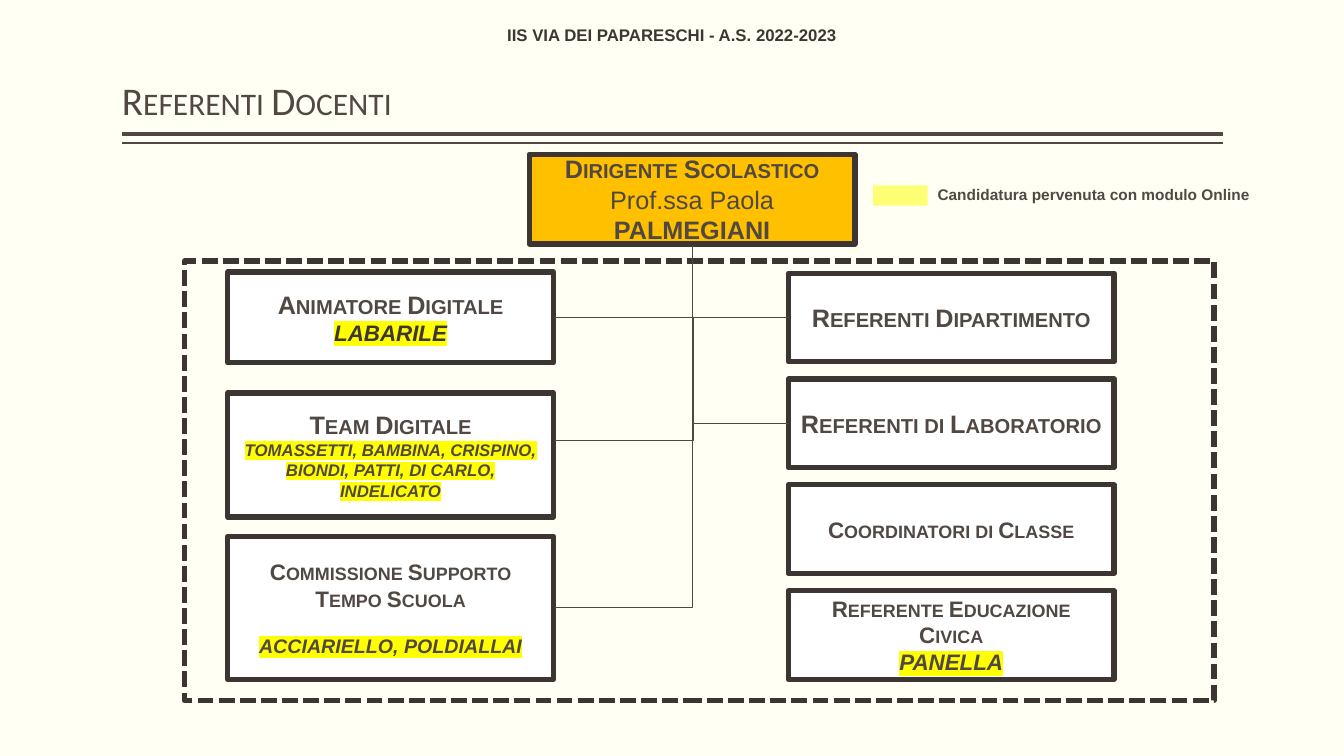
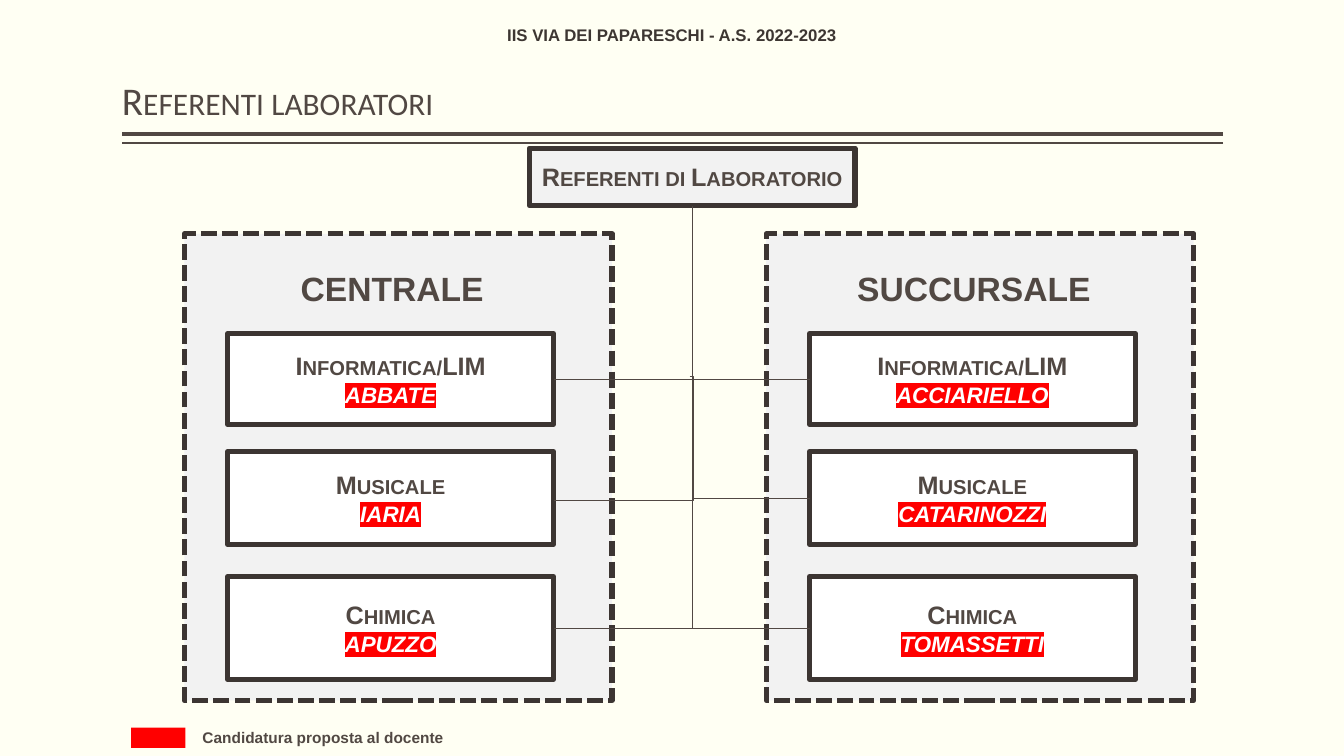
from lxml import etree
from pptx import Presentation
from pptx.dml.color import RGBColor
from pptx.enum.dml import MSO_LINE
from pptx.enum.shapes import MSO_CONNECTOR, MSO_SHAPE
from pptx.enum.text import MSO_ANCHOR, MSO_AUTO_SIZE, PP_ALIGN
from pptx.oxml.ns import qn
from pptx.util import Inches, Pt

COLORS = {
    "background": "FFFFF3", "text": "514843", "dark": "3D3632", "border": "3C3532",
    "white": "FFFFFF", "panel": "F2F2F2", "head": "FFC000", "yellow": "FFFF00",
    "pale_yellow": "FFFF76", "red": "FF0000",
}
SCHOOL = "IIS VIA DEI PAPARESCHI - A.S. 2022-2023"
SLIDE_WIDTH, SLIDE_HEIGHT = 13.33, 7.5
MARGIN, RULE_WIDTH = 1.21, 10.92
RULES = [(1.33, 3), (1.42, 1)]
BOX_WIDTH = 3.23
LEFT_X = 2.26
HEAD_X = 5.25
TRUNK_X = 6.87
SIDE_START_X = 6.84


def role(text, size=18):
    return [(text, dict(size=size, bold=True, small_caps=True))]


def teacher(text, size=16, color="text", highlight="yellow"):
    return [(text, dict(size=size, color=color, bold=True, italic=True, highlight=highlight))]


def proposed(subject, name):
    return [role(subject), teacher(name, color="white", highlight="red")]


TEACHERS_RIGHT_X = 7.82
TEACHERS_RIGHT_TOP, TEACHERS_RIGHT_STEP = 2.71, 1.05
TEACHERS_HEAD = [
    role("Dirigente Scolastico"),
    [("Prof.ssa Paola ", dict(size=18)), ("PALMEGIANI", dict(size=18, bold=True))],
]
TEACHERS_LEFT = [
    dict(top=2.7, height=0.9, gap=0,
         lines=[role("Animatore Digitale"), teacher("LABARILE", color="dark")]),
    dict(top=3.9, height=1.23, gap=0,
         lines=[role("Team Digitale"),
                teacher("TOMASSETTI, BAMBINA, CRISPINO, BIONDI, PATTI, DI CARLO, INDELICATO", 12)]),
    dict(top=5.32, height=1.42, gap=16,
         lines=[role("Commissione Supporto Tempo Scuola", 16),
                teacher("ACCIARIELLO, POLDIALLAI", 14)]),
]
TEACHERS_RIGHT = [
    [role("Referenti Dipartimento")],
    [role("Referenti di Laboratorio")],
    [role("Coordinatori di Classe", 16)],
    [role("Referente Educazione Civica", 16), teacher("PANELLA")],
]
TEACHERS_TREE = dict(left=[(2.43, 3.15), (2.43, 6.03)], side=(3.15, 4.37),
                     right=[(2.43, 3.15), (2.43, 4.2)])

SITE_OFFSET = 5.77
LAB_ROWS = [("Informatica/LIM", 3.31, 0.9), ("Musicale", 4.48, 0.92), ("Chimica", 5.72, 1.02)]
SITES = [
    ("CENTRALE", ["ABBATE", "IARIA", "APUZZO"]),
    ("SUCCURSALE", ["ACCIARIELLO", "CATARINOZZI", "TOMASSETTI"]),
]
LABS_TREE = dict(left=[(2.04, 3.76), (2.43, 6.23)], side=(3.73, 4.96),
                 right=[(2.04, 3.76), (2.04, 4.94), (2.04, 6.23)])


def rgb(name):
    return RGBColor.from_string(COLORS[name])


def add_run(paragraph, text, size, color="text", bold=False, italic=False,
            small_caps=False, highlight=None, font="Arial"):
    run = paragraph.add_run()
    run.text = text
    run.font.size = Pt(size)
    run.font.bold = bold
    run.font.italic = italic
    run.font.color.rgb = rgb(color)
    run.font.name = font
    properties = run._r.get_or_add_rPr()
    if small_caps:
        properties.set("cap", "small")
    if highlight:
        mark = etree.Element(qn("a:highlight"))
        etree.SubElement(mark, qn("a:srgbClr")).set("val", COLORS[highlight])
        properties.find(qn("a:latin")).addprevious(mark)


def fill_text(frame, lines, align=PP_ALIGN.CENTER, gap=0):
    frame.word_wrap = True
    for index, runs in enumerate(lines):
        paragraph = frame.add_paragraph() if index else frame.paragraphs[0]
        paragraph.alignment = align
        if index and gap:
            paragraph.space_before = Pt(gap)
        for text, style in runs:
            add_run(paragraph, text, **style)


def add_rectangle(slide, left, top, width, height, fill=None, border=True, dashed=False):
    shape = slide.shapes.add_shape(
        MSO_SHAPE.RECTANGLE, Inches(left), Inches(top), Inches(width), Inches(height))
    shape.shadow.inherit = False
    if fill:
        shape.fill.solid()
        shape.fill.fore_color.rgb = rgb(fill)
    else:
        shape.fill.background()
    if border:
        shape.line.color.rgb = rgb("border")
        shape.line.width = Pt(3.78)
        if dashed:
            shape.line.dash_style = MSO_LINE.SQUARE_DOT
    else:
        shape.line.fill.background()
    return shape


def add_box(slide, left, top, height, lines, fill="white", gap=0):
    shape = add_rectangle(slide, left, top, BOX_WIDTH, height, fill)
    shape.text_frame.vertical_anchor = MSO_ANCHOR.MIDDLE
    fill_text(shape.text_frame, lines, gap=gap)


def add_label(slide, left, top, width, height, text, size, align=PP_ALIGN.CENTER, color="text"):
    box = slide.shapes.add_textbox(Inches(left), Inches(top), Inches(width), Inches(height))
    fill_text(box.text_frame, [[(text, dict(size=size, bold=True, color=color))]], align)
    return box.text_frame


def add_line(slide, x1, y1, x2, y2, width=0.5, kind=MSO_CONNECTOR.STRAIGHT):
    line = slide.shapes.add_connector(kind, Inches(x1), Inches(y1), Inches(x2), Inches(y2))
    line.line.color.rgb = rgb("text")
    line.line.width = Pt(width)
    etree.SubElement(line._element.spPr, qn("a:effectLst"))
    return line


def add_branch(slide, top, x, y):
    center_x, center_y = (TRUNK_X + x) / 2, (top + y) / 2
    half_width, half_height = (y - top) / 2, abs(x - TRUNK_X) / 2
    to_right = x > TRUNK_X
    if to_right:
        half_width = -half_width
    line = add_line(slide, center_x - half_width, center_y - half_height,
                    center_x + half_width, center_y + half_height, kind=MSO_CONNECTOR.ELBOW)
    line.rotation_degrees = 270 if to_right else 90
    properties = line._element.spPr
    properties.find(qn("a:xfrm")).set("rot", str(line.rotation_degrees * 60000))
    properties.find(qn("a:prstGeom")).set("prst", "bentConnector2")


def add_side_branch(slide, start_y, x, y):
    line = add_line(slide, SIDE_START_X, start_y, x, y, kind=MSO_CONNECTOR.ELBOW)
    adjustments = line._element.spPr.find(qn("a:prstGeom")).find(qn("a:avLst"))
    guide = etree.SubElement(adjustments, qn("a:gd"))
    guide.set("name", "adj1")
    guide.set("fmla", "val -2500")


def add_tree(slide, tree, right_x):
    left_edge = LEFT_X + BOX_WIDTH
    side_start, side_end = tree["side"]
    add_side_branch(slide, side_start, left_edge, side_end)
    for x, branches in ((left_edge, tree["left"]), (right_x, tree["right"])):
        for top, y in branches:
            add_branch(slide, top, x, y)


def add_legend(slide, left, top, text_left, text, color):
    add_rectangle(slide, left, top, 0.54, 0.2, color, border=False)
    add_label(slide, text_left, top - 0.05, 3.42, 0.29, text, 11, PP_ALIGN.LEFT)


def add_base_slide(presentation, title):
    slide = presentation.slides.add_slide(presentation.slide_layouts[5])
    for y, width in RULES:
        add_line(slide, MARGIN + RULE_WIDTH, y, MARGIN, y, width)
    shape = slide.shapes.title
    shape.left, shape.top = Inches(MARGIN), Inches(0.08)
    shape.width, shape.height = Inches(RULE_WIDTH), Inches(1.2)
    frame = shape.text_frame
    frame.auto_size = MSO_AUTO_SIZE.NONE
    frame.vertical_anchor = MSO_ANCHOR.BOTTOM
    frame.margin_left = frame.margin_right = 0
    style = dict(size=28, small_caps=True, font="Calibri")
    fill_text(frame, [[(title, style)]], PP_ALIGN.LEFT)
    frame.paragraphs[0].line_spacing = 0.9
    header = add_label(slide, 0, 0.15, SLIDE_WIDTH, 0.4, SCHOOL, 12, color="dark")
    header.vertical_anchor = MSO_ANCHOR.MIDDLE
    header.margin_left = header.margin_right = 0
    return slide


def build_teachers(presentation):
    slide = add_base_slide(presentation, "Referenti Docenti")
    add_rectangle(slide, 1.83, 2.59, 10.21, 4.36, dashed=True)
    add_box(slide, HEAD_X, 1.53, 0.89, TEACHERS_HEAD, "head")
    for box in TEACHERS_LEFT:
        add_box(slide, LEFT_X, box["top"], box["height"], box["lines"], gap=box["gap"])
    for index, lines in enumerate(TEACHERS_RIGHT):
        top = TEACHERS_RIGHT_TOP + index * TEACHERS_RIGHT_STEP
        add_box(slide, TEACHERS_RIGHT_X, top, 0.88, lines)
    add_tree(slide, TEACHERS_TREE, TEACHERS_RIGHT_X)
    add_legend(slide, 8.66, 1.84, 9.2, "Candidatura pervenuta con modulo Online", "pale_yellow")


def build_labs(presentation):
    slide = add_base_slide(presentation, "Referenti laboratori")
    add_box(slide, HEAD_X, 1.47, 0.57, [role("Referenti di Laboratorio")], "panel")
    for index, (site, names) in enumerate(SITES):
        shift = index * SITE_OFFSET
        add_rectangle(slide, 1.83 + shift, 2.32, 4.24, 4.63, "panel", dashed=True)
        add_label(slide, LEFT_X + shift, 2.61, 3.26, 0.5, site, 24)
        for (subject, top, height), name in zip(LAB_ROWS, names):
            add_box(slide, LEFT_X + shift, top, height, proposed(subject, name))
    add_tree(slide, LABS_TREE, LEFT_X + SITE_OFFSET)
    add_legend(slide, 1.3, 7.22, 1.91, "Candidatura proposta al docente", "red")


def main():
    presentation = Presentation()
    presentation.slide_width = Inches(SLIDE_WIDTH)
    presentation.slide_height = Inches(SLIDE_HEIGHT)
    background = presentation.slide_master.background.fill
    background.solid()
    background.fore_color.rgb = rgb("background")
    build_teachers(presentation)
    build_labs(presentation)
    presentation.save("out.pptx")


if __name__ == "__main__":
    main()
